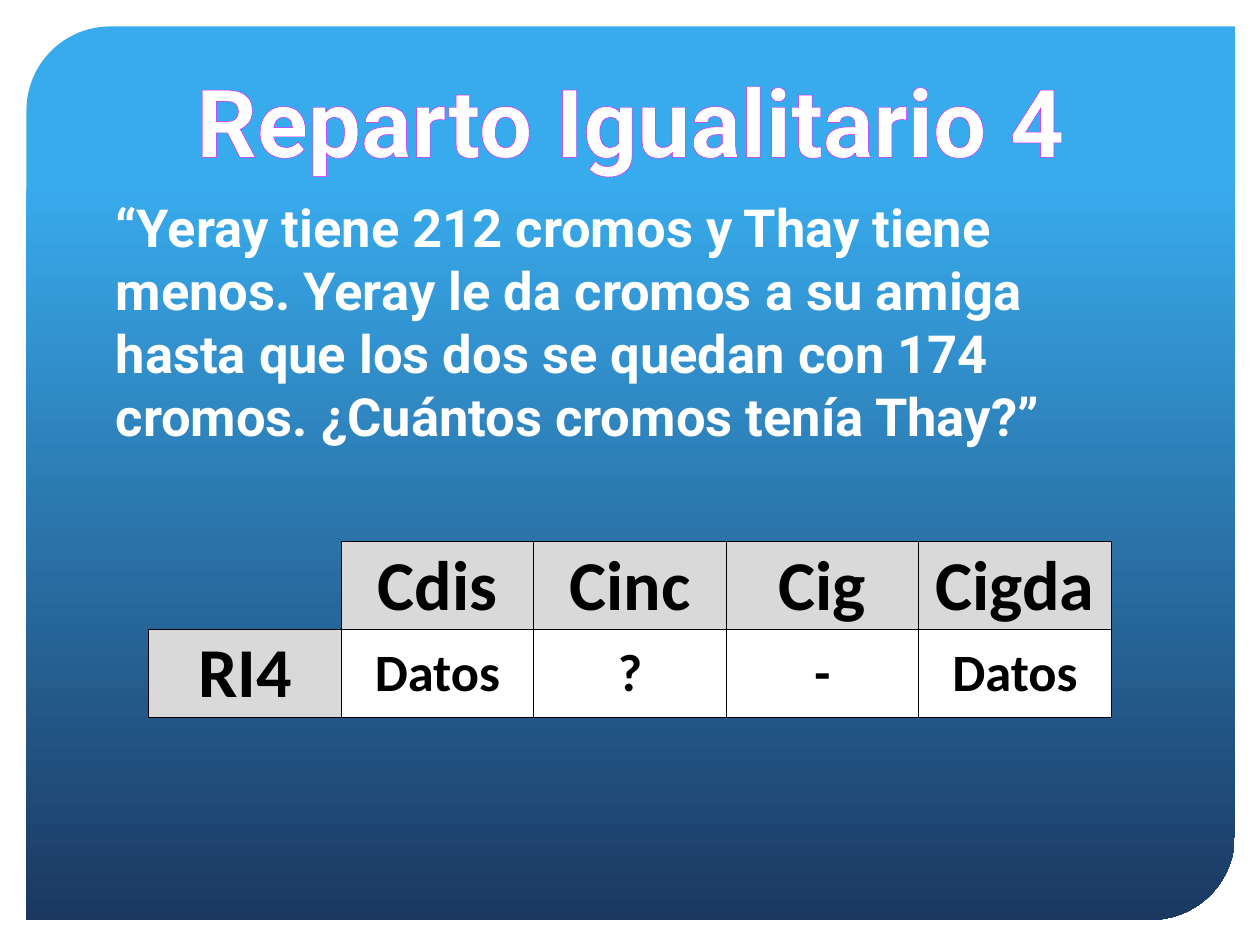
import pptx
import pptx.dml.color
import pptx.enum.dml
import pptx.enum.shapes
import pptx.enum.text
import pptx.oxml
import pptx.util
from pptx.oxml.ns import nsdecls

COLUMNS, ROWS = 100, 75
CENTER = pptx.enum.text.PP_ALIGN.CENTER
MIDDLE = pptx.enum.text.MSO_ANCHOR.MIDDLE


def rgb(value):
    return pptx.dml.color.RGBColor.from_string(value)


def line_xml(tag, color, width):
    """Return an a:ln-type element; no colour means no line."""
    fill = f'<a:solidFill><a:srgbClr val="{color}"/></a:solidFill>' if color else "<a:noFill/>"
    return pptx.oxml.parse_xml(
        f'<a:{tag} {nsdecls("a")} w="{pptx.util.Pt(width)}">{fill}</a:{tag}>')


class Deck:
    """Holds the style and the current slide; lengths are grid columns and rows."""
    font, table_font = "Roboto", "Calibri"
    white, black, gray, pink = "FFFFFF", "000000", "D9D9D9", "E113FF"
    sky, navy = "38ABED", "1B3861"

    def __init__(self):
        self.prs = pptx.Presentation()
        self.prs.slide_width = pptx.util.Inches(10)
        self.prs.slide_height = pptx.util.Inches(7.5)
        self.s = self.prs.slides.add_slide(self.prs.slide_layouts[6])

    def box(self, x, y, w, h):
        col, row = self.prs.slide_width / COLUMNS, self.prs.slide_height / ROWS
        return [round(v) for v in (x * col, y * row, w * col, h * row)]

    def panel(self, *place):
        sp = self.s.shapes.add_shape(
            pptx.enum.shapes.MSO_SHAPE.ROUND_2_DIAG_RECTANGLE, *self.box(*place))
        sp.shadow.inherit = False
        sp.adjustments[0], sp.adjustments[1] = 0.094, 0
        sp.line.fill.background()
        sp.fill.gradient()
        sp.fill.gradient_angle = 270
        for stop, position, color in zip(sp.fill.gradient_stops, (0.17, 1), (self.sky, self.navy)):
            stop.position = position
            stop.color.rgb = rgb(color)

    def run(self, p, text, size, font, color):
        r = p.add_run()
        r.text = text
        r.font.size, r.font.name, r.font.bold = pptx.util.Pt(size), font, True
        r.font.color.rgb = rgb(color)
        return r

    def text(self, place, text, size, align=None, wrap=True, outline=None):
        tf = self.s.shapes.add_textbox(*self.box(*place)).text_frame
        tf.word_wrap = wrap
        tf.auto_size = pptx.enum.text.MSO_AUTO_SIZE.SHAPE_TO_FIT_TEXT
        p = tf.paragraphs[0]
        p.alignment = align
        r = self.run(p, text, size, self.font, self.white)
        if outline:
            r.font._element.insert(0, line_xml("ln", outline, 1))

    def cell(self, cell, text, size, fill):
        """Style one cell; an empty one shows only the borders it shares."""
        if text:
            cell.fill.solid()
            cell.fill.fore_color.rgb = rgb(fill)
            cell.vertical_anchor = MIDDLE
            cell.margin_left = cell.margin_right = cell.margin_top = pptx.util.Inches(0.01)
            cell.margin_bottom = 0
            p = cell.text_frame.paragraphs[0]
            p.alignment = CENTER
            self.run(p, text, size, self.table_font, self.black)
        else:
            cell.fill.background()
        tcPr = cell._tc.get_or_add_tcPr()
        for i, side in enumerate("LRTB"):
            color = self.black if text or side in "RB" else None
            tcPr.insert(i, line_xml("ln" + side, color, 0.5))

    def table(self, place, rows):
        x, y, w, h = self.box(*place)
        table = self.s.shapes.add_table(len(rows), len(rows[0]), x, y, w, h).table
        table.first_row = table.horz_banding = False
        for i, row in enumerate(rows):
            for j, text in enumerate(row):
                header = i == 0 or j == 0
                self.cell(table.cell(i, j), text, 40 if header else 30,
                          self.gray if header else self.white)


def main():
    deck = Deck()
    deck.panel(2.1, 2.1, 95.9, 70.9)
    deck.text((12.7, 4.5, 74.7, 10.1), "Reparto Igualitario 4", 54,
              align=CENTER, wrap=False, outline=deck.pink)
    deck.table((11.8, 43, 76.4, 13.9), [
        ["", "Cdis", "Cinc", "Cig", "Cigda"],
        ["RI4", "Datos", "?", "-", "Datos"],
    ])
    deck.text((8.2, 15, 84.3, 21.2),
              "“Yeray tiene 212 cromos y Thay tiene menos. Yeray le da cromos a su amiga "
              "hasta que los dos se quedan con 174 cromos. ¿Cuántos cromos tenía Thay?”", 30)
    deck.prs.save("out.pptx")


if __name__ == "__main__":
    main()
